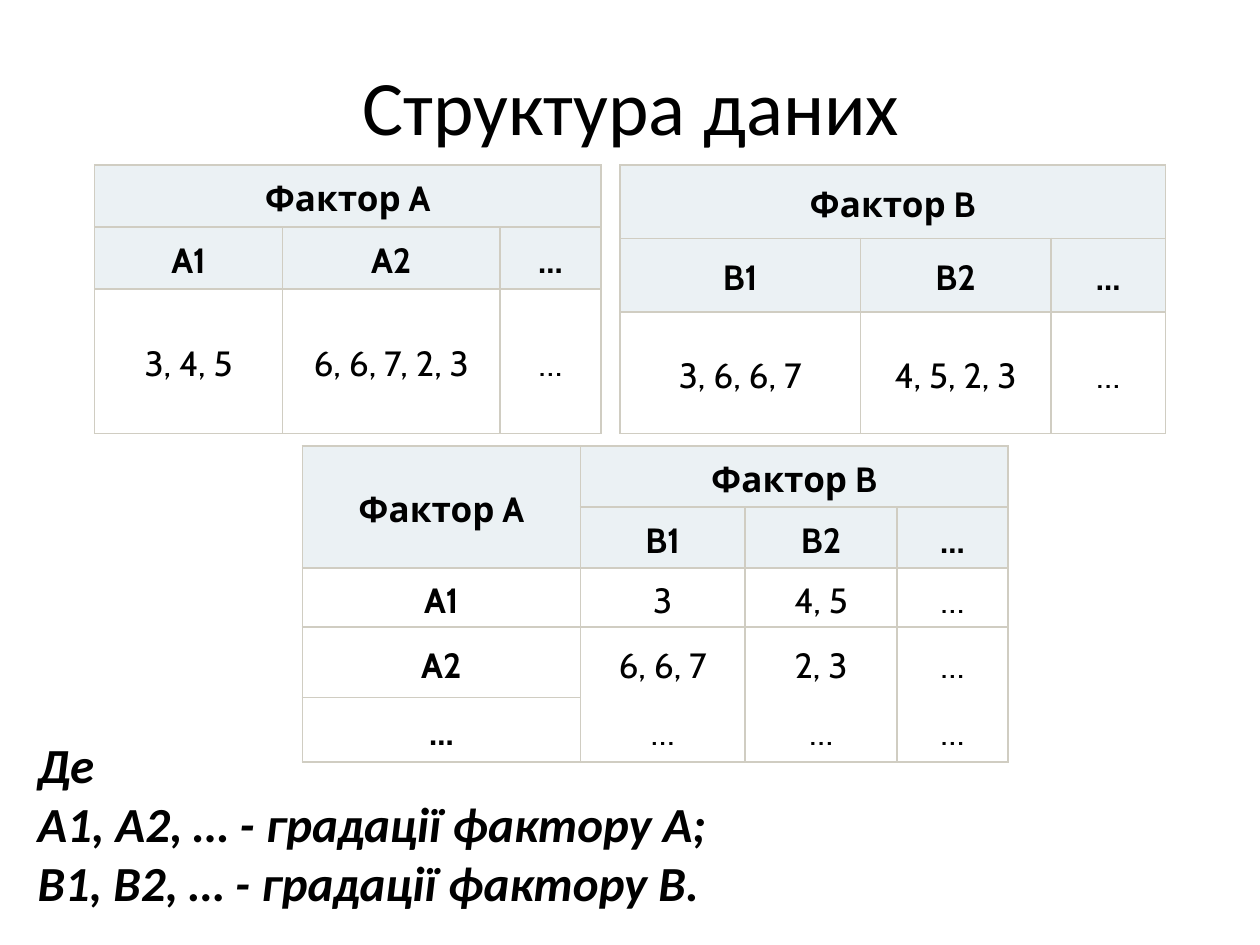
from dataclasses import dataclass

from lxml.etree import SubElement
from pptx import Presentation
from pptx.dml.color import RGBColor
from pptx.enum.text import MSO_ANCHOR as Anchor, MSO_AUTO_SIZE as AutoSize, PP_ALIGN as Align
from pptx.oxml.ns import qn
from pptx.util import Inches, Pt


@dataclass(frozen=True)
class Theme:
    ink: str = "000000"
    header: str = "EBF1F4"
    body: str = "FFFFFF"
    rule: str = "D0CDC2"
    heading_font: str = "Calibri"
    table_font: str = "Cabin"
    title_size: int = 44
    legend_size: int = 28
    table_size: int = 20
    rule_width: int = 1


@dataclass(frozen=True)
class Box:
    left: float
    top: float
    width: float
    height: float

    def emu(self):
        return [Inches(cells * GRID) for cells in (self.left, self.top, self.width, self.height)]


THEME = Theme()
GRID = 0.1
COLUMNS, ROWS = 100, 75
HEADER_ROWS = 2


def style(paragraph, font_name, size, bold=False, italic=False):
    font = paragraph.font
    font.name, font.size, font.bold, font.italic = font_name, Pt(size), bold, italic
    font.color.rgb = RGBColor.from_string(THEME.ink)


def place(shape, box):
    shape.left, shape.top, shape.width, shape.height = box.emu()


def add_title(slide, box, wording):
    title = slide.shapes.title
    place(title, box)
    title.text_frame.text = wording
    title.text_frame.vertical_anchor = Anchor.MIDDLE
    heading = title.text_frame.paragraphs[0]
    heading.alignment = Align.CENTER
    style(heading, THEME.heading_font, THEME.title_size)


def add_legend(slide, box, lines):
    frame = slide.shapes.add_textbox(*box.emu()).text_frame
    frame.word_wrap = True
    frame.auto_size = AutoSize.SHAPE_TO_FIT_TEXT
    for number, line in enumerate(lines):
        paragraph = frame.add_paragraph() if number else frame.paragraphs[0]
        paragraph.text = line
        style(paragraph, THEME.heading_font, THEME.legend_size, bold=True, italic=True)


def draw_borders(cell, open_sides):
    properties = cell._tc.get_or_add_tcPr()
    for side in "LRTB":
        border = SubElement(properties, qn(f"a:ln{side}"), w=str(Pt(THEME.rule_width)))
        if side in open_sides:
            SubElement(border, qn("a:noFill"))
        else:
            fill = SubElement(border, qn("a:solidFill"))
            SubElement(fill, qn("a:srgbClr"), val=THEME.rule)


def format_cell(cell, wording, is_header, is_bold, open_sides):
    draw_borders(cell, open_sides)
    cell.fill.solid()
    cell.fill.fore_color.rgb = RGBColor.from_string(THEME.header if is_header else THEME.body)
    cell.vertical_anchor = Anchor.MIDDLE
    inset = Inches(0.05 if is_header and wording != "…" else 0.04)
    cell.margin_left = cell.margin_right = cell.margin_top = cell.margin_bottom = inset
    cell.text = wording
    paragraph = cell.text_frame.paragraphs[0]
    paragraph.alignment = Align.CENTER
    paragraph.line_spacing = 1.15
    style(paragraph, THEME.table_font, THEME.table_size, bold=is_bold)


def add_factor_table(slide, box, column_shares, row_shares, wording, merges,
                     stub_columns=0, open_sides=None):
    left, top, width, height = box.emu()
    table = slide.shapes.add_table(len(row_shares), len(column_shares),
                                   left, top, width, height).table
    table.first_row = table.horz_banding = False
    for column, share in zip(table.columns, column_shares):
        column.width = int(width * share / sum(column_shares))
    for row, share in zip(table.rows, row_shares):
        row.height = int(height * share / sum(row_shares))
    for r, line in enumerate(wording):
        for c, entry in enumerate(line):
            is_header = r < HEADER_ROWS
            sides = (open_sides or {}).get(r, "") if c >= stub_columns else ""
            format_cell(table.cell(r, c), entry, is_header, is_header or c < stub_columns, sides)
    for start, end in merges:
        table.cell(*start).merge(table.cell(*end))


def build_slide(prs):
    slide = prs.slides.add_slide(prs.slide_layouts[5])
    add_title(slide, Box(5.1, 2.1, 90, 12.5), "Структура даних")
    add_legend(slide, Box(2, 57.8, 76.4, 24.6), [
        "Де",
        "A1, A2, … - градації фактору A;",
        "B1, B2, … - градації фактору B.",
    ])
    across = [((0, 0), (0, 2))]
    add_factor_table(slide, Box(49.2, 13.1, 43.3, 21.3), (191, 151, 91), (58, 58, 96), [
        ("Фактор B", "", ""),
        ("B1", "B2", "…"),
        ("3, 6, 6, 7", "4, 5, 2, 3", "…"),
    ], across)
    add_factor_table(slide, Box(7.5, 13.1, 40.2, 21.3), (149, 172, 80), (49, 49, 114), [
        ("Фактор A", "", ""),
        ("A1", "A2", "…"),
        ("3, 4, 5", "6, 6, 7, 2, 3", "…"),
    ], across)
    add_factor_table(slide, Box(24, 35.4, 56, 25), (221, 131, 121, 88), (48, 48, 47, 56, 51), [
        ("Фактор A", "Фактор B", "", ""),
        ("", "B1", "B2", "…"),
        ("A1", "3", "4, 5", "…"),
        ("A2", "6, 6, 7", "2, 3", "…"),
        ("…", "…", "…", "…"),
    ], [((0, 0), (1, 0)), ((0, 1), (0, 3))], stub_columns=1, open_sides={3: "B", 4: "T"})


def main():
    prs = Presentation()
    prs.slide_width, prs.slide_height = Inches(COLUMNS * GRID), Inches(ROWS * GRID)
    build_slide(prs)
    prs.save("out.pptx")


if __name__ == "__main__":
    main()
